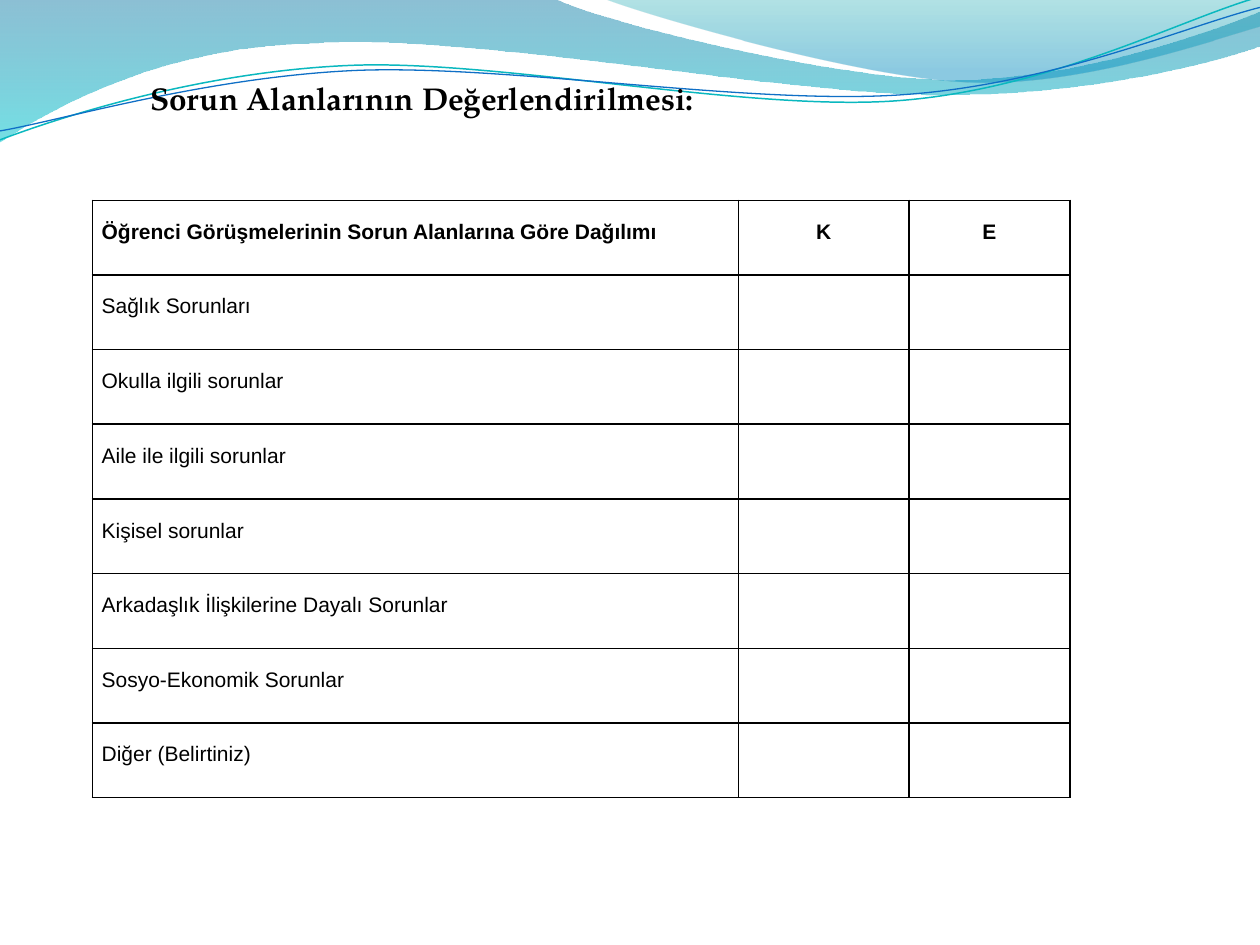
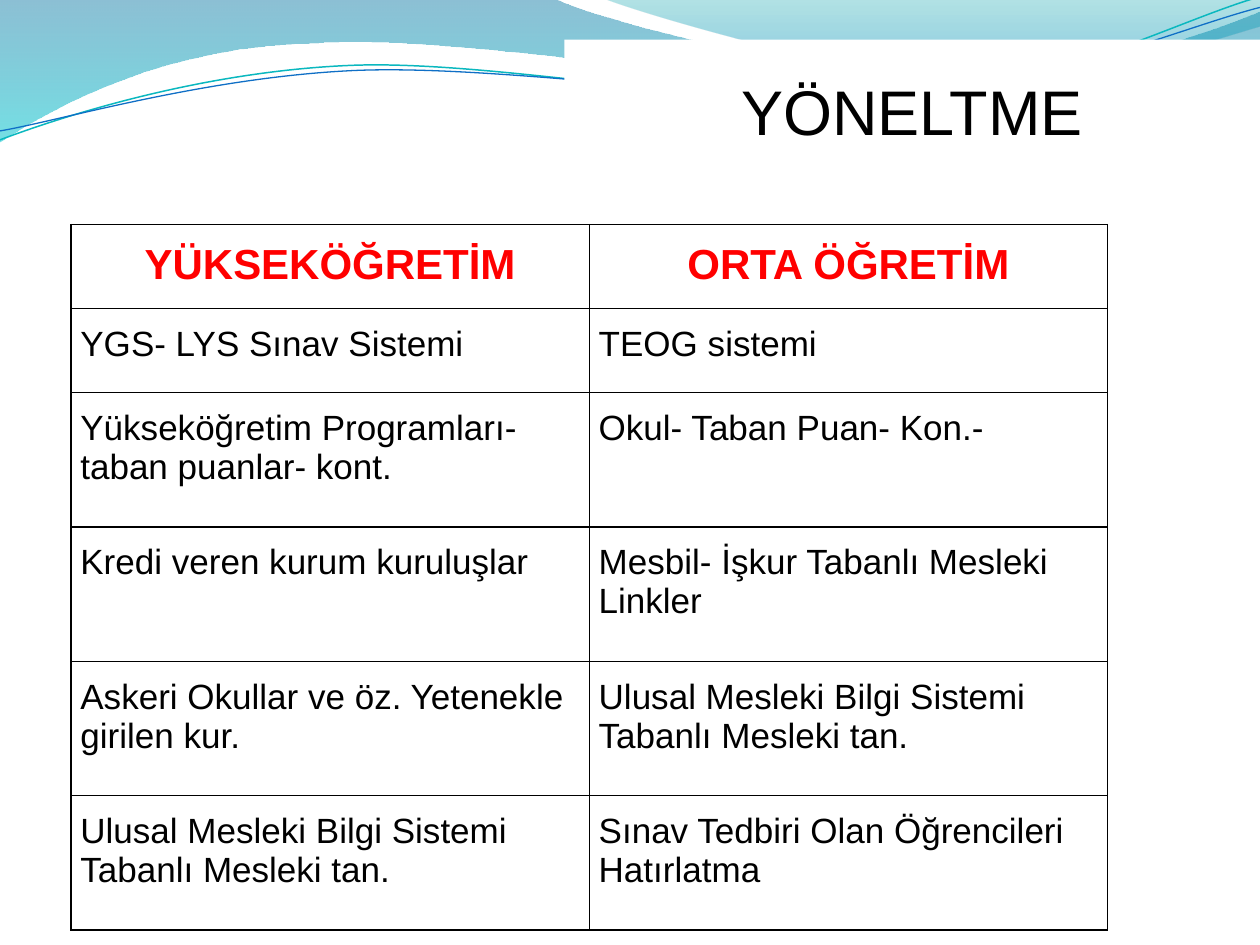
"""Build two guidance slides that share a wave header and bordered tables."""
from dataclasses import dataclass
from math import cos, radians, sin

from lxml import etree
from pptx import Presentation
from pptx.dml.color import RGBColor
from pptx.enum.shapes import MSO_SHAPE
from pptx.enum.text import MSO_ANCHOR, PP_ALIGN
from pptx.oxml.ns import qn
from pptx.slide import Slide
from pptx.util import Cm, Pt

LEFT, CENTER = PP_ALIGN.LEFT, PP_ALIGN.CENTER
MIDDLE, BOTTOM = MSO_ANCHOR.MIDDLE, MSO_ANCHOR.BOTTOM
RECTANGLE = MSO_SHAPE.RECTANGLE

BLACK = RGBColor(0x00, 0x00, 0x00)
WHITE = RGBColor(0xFF, 0xFF, 0xFF)
RED = RGBColor(0xFF, 0x00, 0x00)
DEEP_BLUE = RGBColor(0x00, 0x74, 0xA1)
CYAN = RGBColor(0x00, 0xC6, 0xCF)
TEAL = RGBColor(0x00, 0xA1, 0xA9)
SKY_BLUE = RGBColor(0x00, 0x8B, 0xBF)
LINE_TEAL = RGBColor(0x0A, 0xB8, 0xBF)
LINE_BLUE = RGBColor(0x0F, 0x6F, 0xC6)

SANS = "Arial"
SERIF = "TeX Gyre Pagella"
LINE_TILT = -2.7
BORDER_PT = 1

Point = tuple[float, float]


@dataclass(frozen=True)
class Stop:
    """Gradient stop with position and opacity as fractions."""
    position: float
    color: RGBColor
    opacity: float


@dataclass(frozen=True)
class Wave:
    """Outline in cm; a segment is one line end or three Bézier points."""
    start: Point
    segments: tuple[tuple[Point, ...], ...]
    stops: tuple[Stop, ...] = ()
    color: RGBColor = BLACK
    width: float = 0
    tilt: float = 0


@dataclass(frozen=True)
class TextStyle:
    """Look of a paragraph."""
    size: float
    font: str = SANS
    color: RGBColor = BLACK
    bold: bool = False
    align: PP_ALIGN = LEFT
    spacing: float = 1.0


@dataclass(frozen=True)
class Title:
    """Title box: frame and insets (left, top, right, bottom) in cm."""
    text: str
    frame: tuple[float, float, float, float]
    insets: tuple[float, float, float, float]
    anchor: MSO_ANCHOR
    style: TextStyle
    fill: RGBColor | None = None


@dataclass(frozen=True)
class Grid:
    """Table with one style per header cell and one for the body."""
    left: float
    top: float
    columns: tuple[float, ...]
    heights: tuple[float, ...]
    rows: tuple[tuple[str, ...], ...]
    header: tuple[TextStyle, ...]
    body: TextStyle


WAVES = (
    Wave((0, 0), (
        ((11.18, -0.03),),
        ((12.09, 0.43), (16.87, 1.6), (19.25, 1.6)),
        ((21.67, 1.6), (24.33, 0.66), (25.4, 0.23)),
        ((25.43, 0.91),),
        ((24.97, 1.12), (22.1, 1.93), (18.95, 1.91)),
        ((15.8, 1.91), (9.7, 0.71), (6.53, 0.86)),
        ((3.28, 0.91), (1.17, 2.11), (-0.03, 2.87)),
        ((0, 0),),
    ), stops=(Stop(0, DEEP_BLUE, 0.45), Stop(1, CYAN, 0.55))),
    Wave((12.17, -0.03), (
        ((12.93, 0.28), (17.32, 1.57), (19.53, 1.65)),
        ((21.74, 1.75), (24.41, 0.81), (25.4, 0.53)),
        ((25.4, 0),),
        ((12.17, -0.03),),
    ), stops=(Stop(0, TEAL, 0.3), Stop(0.8, SKY_BLUE, 0.45))),
    Wave((0, 2.82), (
        ((1.22, 2.36), (4.01, 1.45), (7.04, 1.32)),
        ((10.03, 1.19), (15.06, 2.26), (18.11, 2.03)),
        ((21.16, 1.8), (23.83, 0.38), (25.35, -0.05)),
    ), color=LINE_TEAL, width=0.85, tilt=LINE_TILT),
    Wave((0, 2.64), (
        ((1.19, 2.44), (4.17, 1.55), (7.19, 1.42)),
        ((10.24, 1.3), (15.16, 2.13), (18.21, 1.91)),
        ((21.23, 1.7), (23.9, 0.53), (25.4, 0.15)),
    ), color=LINE_BLUE, width=0.75, tilt=LINE_TILT),
)

PROBLEM_HEAD = TextStyle(12, bold=True, spacing=1.15)
PROBLEM_COUNT = TextStyle(12, bold=True, align=CENTER, spacing=1.15)
GUIDANCE_HEAD = TextStyle(24, color=RED, bold=True, align=CENTER)

PROBLEM_AREAS = (
    "Sağlık Sorunları",
    "Okulla ilgili sorunlar",
    "Aile ile ilgili sorunlar",
    "Kişisel sorunlar",
    "Arkadaşlık İlişkilerine Dayalı Sorunlar",
    "Sosyo-Ekonomik Sorunlar",
    "Diğer (Belirtiniz)",
)

SLIDES = (
    (
        Title("Sorun Alanlarının Değerlendirilmesi:", (2.78, 0.8, 22.33, 2.82),
              (0.25, 0.25, 0.25, 0.72), MIDDLE, TextStyle(18, SERIF, bold=True)),
        Grid(1.86, 4.04, (13.03, 3.43, 3.25), (1.5, 1.51) * 4,
             (("Öğrenci Görüşmelerinin Sorun Alanlarına Göre Dağılımı", "K", "E"),
              *((area, "", "") for area in PROBLEM_AREAS)),
             (PROBLEM_HEAD, PROBLEM_COUNT, PROBLEM_COUNT),
             TextStyle(12, spacing=1.15)),
    ),
    (
        Title("YÖNELTME", (11.38, 0.8, 14.02, 2.18), (0, 0.13, 0, 0), BOTTOM,
              TextStyle(36, align=CENTER), WHITE),
        Grid(1.43, 4.53, (10.45,) * 2, (1.69,) * 2 + (2.71,) * 4,
             (("YÜKSEKÖĞRETİM", "ORTA ÖĞRETİM"),
              ("YGS- LYS Sınav Sistemi", "TEOG sistemi"),
              ("Yükseköğretim Programları- taban puanlar- kont.",
               "Okul- Taban Puan- Kon.-"),
              ("Kredi veren kurum kuruluşlar",
               "Mesbil- İşkur Tabanlı Mesleki Linkler"),
              ("Askeri Okullar ve öz. Yetenekle girilen kur.",
               "Ulusal Mesleki Bilgi Sistemi Tabanlı Mesleki tan."),
              ("Ulusal Mesleki Bilgi Sistemi Tabanlı Mesleki tan.",
               "Sınav Tedbiri Olan Öğrencileri Hatırlatma")),
             (GUIDANCE_HEAD,) * 2, TextStyle(20)),
    ),
)


def turn(point: Point, degrees: float) -> Point:
    """Rotate a point clockwise about the slide's top left corner."""
    x, y = point
    c, s = cos(radians(degrees)), sin(radians(degrees))
    return x * c - y * s, x * s + y * c


def bend(sp, wave: Wave) -> None:
    """Merge the straight steps of each three-point segment into one curve."""
    steps = iter(sp._element.xpath(".//a:path/a:lnTo"))
    for segment in wave.segments:
        first, *others = [next(steps) for _ in segment]
        if others:
            first.tag = qn("a:cubicBezTo")
            for step in others:
                first.append(step[0])
                step.getparent().remove(step)


def draw_wave(slide: Slide, wave: Wave) -> None:
    """Draw a gradient band or a thin line of the header."""
    points = [wave.start, *(p for segment in wave.segments for p in segment)]
    flat = [turn(p, -wave.tilt) for p in points]
    start, *rest = [(Cm(x), Cm(y)) for x, y in flat]
    builder = slide.shapes.build_freeform(*start)
    builder.add_line_segments(rest, close=bool(wave.stops))
    sp = builder.convert_to_shape()
    bend(sp, wave)
    sp.shadow.inherit = False
    if wave.stops:
        sp.line.fill.background()
        fill_gradient(sp, wave.stops)
        return
    half_w, half_h = sp.width / 2, sp.height / 2
    x, y = turn((sp.left + half_w, sp.top + half_h), wave.tilt)
    sp.left, sp.top = round(x - half_w), round(y - half_h)
    sp.rotation = wave.tilt
    sp.fill.background()
    sp.line.color.rgb = wave.color
    sp.line.width = Pt(wave.width)


def fill_gradient(sp, stops: tuple[Stop, ...]) -> None:
    """Fill a shape with a translucent gradient from top to bottom."""
    sp.fill.gradient()
    sp.fill.gradient_angle = 270
    for target, stop in zip(sp.fill.gradient_stops, stops):
        target.position = stop.position
        target.color.rgb = stop.color
    for clr, stop in zip(sp._element.xpath(".//a:gs/a:srgbClr"), stops):
        etree.SubElement(clr, qn("a:alpha"), val=str(round(stop.opacity * 100000)))


def write(tf, text: str, style: TextStyle) -> None:
    """Put one styled paragraph in a text frame."""
    tf.word_wrap = True
    p = tf.paragraphs[0]
    p.text = text
    p.alignment = style.align
    p.line_spacing = style.spacing
    p.font.name = style.font
    p.font.size = Pt(style.size)
    p.font.bold = style.bold
    p.font.color.rgb = style.color


def draw_title(slide: Slide, title: Title) -> None:
    """Draw the title as plain text or on a filled rectangle."""
    frame = map(Cm, title.frame)
    if title.fill is None:
        sp = slide.shapes.add_textbox(*frame)
    else:
        sp = slide.shapes.add_shape(RECTANGLE, *frame)
        sp.shadow.inherit = False
        sp.line.fill.background()
        sp.fill.solid()
        sp.fill.fore_color.rgb = title.fill
    tf = sp.text_frame
    tf.margin_left, tf.margin_top, tf.margin_right, tf.margin_bottom = map(
        Cm, title.insets)
    tf.vertical_anchor = title.anchor
    write(tf, title.text, title.style)


def set_borders(cell) -> None:
    """Give a cell a solid black line on all sides."""
    tc_pr = cell._tc.get_or_add_tcPr()
    for side in ("L", "R", "T", "B"):
        ln = etree.SubElement(tc_pr, qn(f"a:ln{side}"), w=str(Pt(BORDER_PT)))
        fill = etree.SubElement(ln, qn("a:solidFill"))
        etree.SubElement(fill, qn("a:srgbClr"), val=str(BLACK))


def draw_grid(slide: Slide, grid: Grid) -> None:
    """Draw a bordered table without fills."""
    table = slide.shapes.add_table(
        len(grid.rows), len(grid.columns), Cm(grid.left), Cm(grid.top),
        Cm(sum(grid.columns)), Cm(sum(grid.heights))).table
    table.first_row = table.horz_banding = False
    for column, width in zip(table.columns, grid.columns):
        column.width = Cm(width)
    for i, (height, texts) in enumerate(zip(grid.heights, grid.rows)):
        table.rows[i].height = Cm(height)
        for j, text in enumerate(texts):
            cell = table.cell(i, j)
            set_borders(cell)
            cell.fill.background()
            cell.margin_left = cell.margin_right = Cm(0.19)
            cell.margin_top = cell.margin_bottom = Cm(0.33)
            if text:
                write(cell.text_frame, text, grid.body if i else grid.header[j])


def main() -> None:
    """Build and save the presentation."""
    prs = Presentation()
    prs.slide_width, prs.slide_height = Cm(25.4), Cm(19.05)
    for title, grid in SLIDES:
        slide = prs.slides.add_slide(prs.slide_layouts[6])
        for wave in WAVES:
            draw_wave(slide, wave)
        draw_title(slide, title)
        draw_grid(slide, grid)
    prs.save("out.pptx")


if __name__ == "__main__":
    main()
